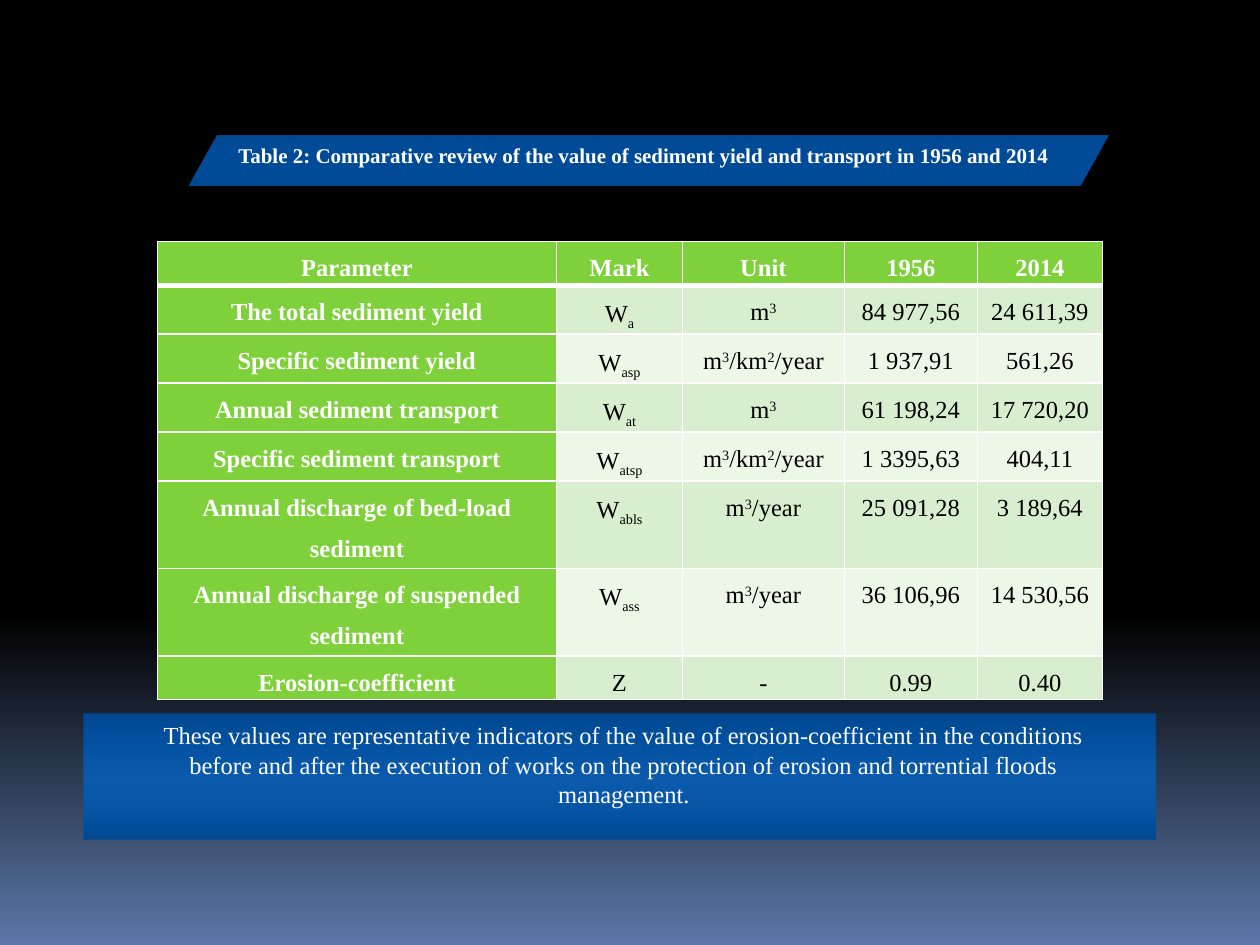
from lxml.etree import SubElement
from pptx import Presentation
from pptx.dml.color import RGBColor
from pptx.enum.shapes import MSO_SHAPE
from pptx.enum.text import MSO_AUTO_SIZE, PP_ALIGN
from pptx.oxml.ns import qn
from pptx.util import Pt

WHITE = RGBColor(0xFF, 0xFF, 0xFF)
BLACK = RGBColor(0x00, 0x00, 0x00)
SLATE = RGBColor(0x5B, 0x77, 0xA8)
BLUE = RGBColor(0x00, 0x66, 0xCC)
GREEN = RGBColor(0x7F, 0xD1, 0x3B)
PALE_GREEN = RGBColor(0xD8, 0xEE, 0xCE)
LIGHT_GREEN = RGBColor(0xEC, 0xF7, 0xE8)

BASELINES = {"^": "30000", "_": "-25000"}


def write_text(frame, text, size=14, color=WHITE, bold=False, line_spacing=None):
    para = frame.paragraphs[0]
    para.alignment = PP_ALIGN.CENTER
    para.line_spacing = line_spacing
    for part in text.split("|"):
        span = para.add_run()
        span.text = part.lstrip("^_")
        span.font.name = "Times New Roman"
        span.font.size = Pt(size)
        span.font.bold = bold
        span.font.color.rgb = color
        if part[0] in BASELINES:
            span.font._element.set("baseline", BASELINES[part[0]])


def apply_gradient(fill, element, stops):
    fill.gradient()
    fill.gradient_angle = 270
    stop_list = next(element.iter(qn("a:gsLst")))
    for old_stop in list(stop_list):
        stop_list.remove(old_stop)
    for position, color, changes in stops:
        stop = SubElement(stop_list, qn("a:gs"), pos=str(position * 1000))
        tone = SubElement(stop, qn("a:srgbClr"), val=str(color))
        for name, value in changes.items():
            SubElement(tone, qn(f"a:{name}"), val=str(value))


deck = Presentation()
deck.slide_width = Pt(720)
deck.slide_height = Pt(540)
page = deck.slides.add_slide(deck.slide_layouts[6])
apply_gradient(page.background.fill, page.element,
               [(0, BLACK, {}), (65, BLACK, {}), (100, SLATE, {})])

rows = [
    ("Parameter", "Mark", "Unit", "1956", "2014"),
    ("The total sediment yield", "W|_a", "m|^3", "84 977,56", "24 611,39"),
    ("Specific sediment yield", "W|_asp", "m|^3|/km|^2|/year", "1 937,91", "561,26"),
    ("Annual sediment transport", "W|_at", "m|^3", "61 198,24", "17 720,20"),
    ("Specific sediment transport", "W|_atsp", "m|^3|/km|^2|/year", "1 3395,63", "404,11"),
    ("Annual discharge of bed-load sediment", "W|_abls", "m|^3|/year", "25 091,28", "3 189,64"),
    ("Annual discharge of suspended sediment", "W|_ass", "m|^3|/year", "36 106,96", "14 530,56"),
    ("Erosion-coefficient", "Z", "-", "0.99", "0.40"),
]
column_widths = [228, 72, 92.5, 76, 71.5]
row_heights = [25, 28, 28, 28, 28, 50, 50, 25]

table = page.shapes.add_table(len(rows), len(column_widths), Pt(90), Pt(138),
                              Pt(sum(column_widths)), Pt(sum(row_heights))).table
table.horz_banding = False
for column, width in zip(table.columns, column_widths):
    column.width = Pt(width)
for row, height in zip(table.rows, row_heights):
    row.height = Pt(height)

for row_index, values in enumerate(rows):
    for column_index, value in enumerate(values):
        cell = table.cell(row_index, column_index)
        heading = row_index == 0 or column_index == 0
        cell.margin_left = cell.margin_right = Pt(5)
        cell.margin_top = cell.margin_bottom = Pt(0)
        borders = {"lnL": 1, "lnR": 1,
                   "lnT": 3 if row_index == 1 else 1,
                   "lnB": 3 if row_index == 0 else 1}
        for side, weight in borders.items():
            line = SubElement(cell._tc.get_or_add_tcPr(), qn(f"a:{side}"), w=str(Pt(weight)))
            paint = SubElement(line, qn("a:solidFill"))
            SubElement(paint, qn("a:srgbClr"), val=str(WHITE))
        cell.fill.solid()
        band = PALE_GREEN if row_index % 2 else LIGHT_GREEN
        cell.fill.fore_color.rgb = GREEN if heading else band
        write_text(cell.text_frame, value, color=WHITE if heading else BLACK,
                   bold=heading, line_spacing=1.5)

banners = [
    ("Table 2: Comparative review of the value of sediment yield and transport in 1956 and 2014",
     (108, 77.75, 525.5, 28), 0.58, (48, 77.75, 640, 36), 12, True),
    ("These values are representative indicators of the value of erosion-coefficient in the "
     "conditions before and after the execution of works on the protection of erosion and "
     "torrential floods management.",
     (48, 408, 612, 72), 0, (76, 408, 561, 58), 14, False),
]
banner_stops = [(0, BLUE, {"shade": 46275}), (50, BLUE, {"alpha": 74000}),
                (100, BLUE, {"shade": 46275})]

for text, bar_area, slant, text_area, size, bold in banners:
    group = page.shapes.add_group_shape()
    bar = group.shapes.add_shape(MSO_SHAPE.PARALLELOGRAM, *map(Pt, bar_area))
    bar.adjustments[0] = slant
    bar.shadow.inherit = False
    bar.line.fill.background()
    apply_gradient(bar.fill, bar.element, banner_stops)
    box = group.shapes.add_textbox(*map(Pt, text_area))
    box.text_frame.word_wrap = True
    box.text_frame.auto_size = MSO_AUTO_SIZE.SHAPE_TO_FIT_TEXT
    write_text(box.text_frame, text, size=size, bold=bold)

deck.save("out.pptx")
